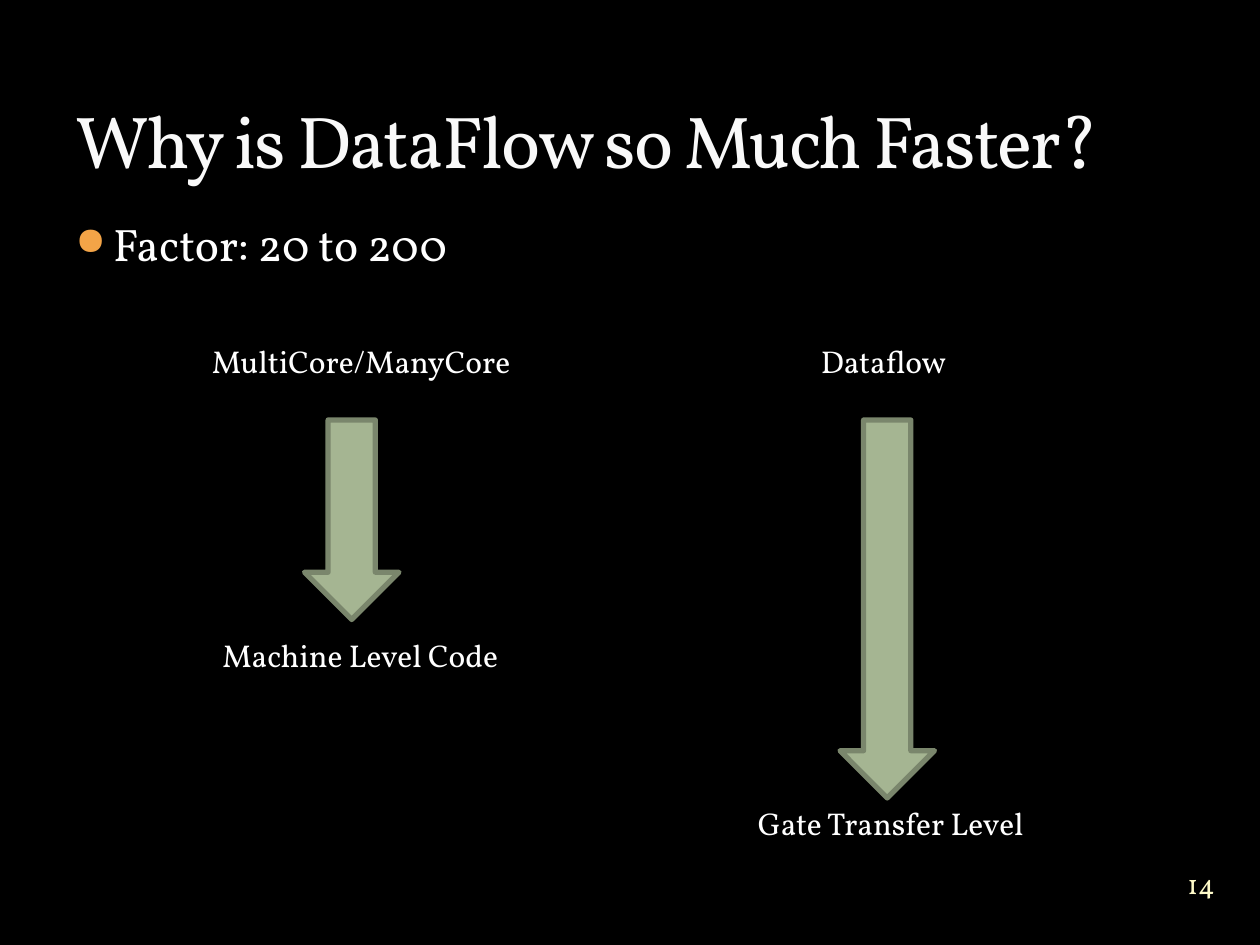
"""Build the slide comparing how far MultiCore/ManyCore and Dataflow compile down."""
import dataclasses
from typing import Any

import lxml.etree
import pptx
import pptx.dml.color
import pptx.enum.shapes
import pptx.enum.text
import pptx.oxml
import pptx.oxml.ns
import pptx.util

RGBColor = pptx.dml.color.RGBColor
BLACK = RGBColor(0x00, 0x00, 0x00)
WHITE = RGBColor(0xFF, 0xFF, 0xFF)
TITLE_WHITE = RGBColor(0xF9, 0xF9, 0xF9)
TITLE_OUTLINE = RGBColor(0x3C, 0x44, 0x22)
CREAM = RGBColor(0xFE, 0xFA, 0xC9)
ORANGE = RGBColor(0xF3, 0xA4, 0x47)
SAGE = RGBColor(0xA5, 0xB5, 0x92)
DARK_SAGE = RGBColor(0x7A, 0x86, 0x6C)

FONT = "Vollkorn"
CELL = pptx.util.Inches(1) / 12
COLUMNS, ROWS = 120, 90
DRAWING = pptx.oxml.ns.nsdecls("a")
ANCHOR = pptx.enum.text.MSO_ANCHOR
ALIGN = pptx.enum.text.PP_ALIGN


@dataclasses.dataclass(frozen=True)
class Area:
    """A rectangle in grid columns and rows."""

    column: float
    row: float
    columns: float
    rows: float

    def lengths(self) -> list[int]:
        """Return left, top, width and height as slide lengths."""
        return [round(value * CELL) for value in dataclasses.astuple(self)]


@dataclasses.dataclass(frozen=True)
class Caption:
    """A line of text with its area and format."""

    text: str
    area: Area
    size: float = 18
    color: RGBColor = WHITE
    frame_format: dict[str, Any] = dataclasses.field(default_factory=dict)
    paragraph_format: dict[str, Any] = dataclasses.field(default_factory=dict)


TITLE = Caption("Why is DataFlow so Much Faster?", Area(6, 2, 108, 16), 42, TITLE_WHITE,
                {"vertical_anchor": ANCHOR.BOTTOM})
FACTOR = Caption("Factor: 20 to 200", Area(6, 20, 108, 8), 26,
                 paragraph_format={"space_before": pptx.util.Pt(6)})
LABELS = [
    Caption("MultiCore/ManyCore", Area(19, 32, 32, 4.8)),
    Caption("Dataflow", Area(77, 32, 18, 4.8)),
    Caption("Machine Level Code", Area(20, 60, 29, 4.8)),
    Caption("Gate Transfer Level", Area(71, 76, 30, 4.8)),
]
PAGE_NUMBER = Caption(
    "14", Area(110.4, 81.1, 8, 6), 16, CREAM,
    {"vertical_anchor": ANCHOR.MIDDLE, "margin_left": 0, "margin_top": 0,
     "margin_right": 0, "margin_bottom": 0},
    {"alignment": ALIGN.CENTER})
ARROWS = [Area(29, 40, 9, 19), Area(80, 40, 9, 36)]


def apply_format(target: Any, values: dict[str, Any]) -> None:
    """Set each named attribute on the target."""
    for name, value in values.items():
        setattr(target, name, value)


def add_caption(slide: Any, caption: Caption) -> Any:
    """Add a text box and return its paragraph."""
    frame = slide.shapes.add_textbox(*caption.area.lengths()).text_frame
    apply_format(frame, {"word_wrap": True, **caption.frame_format})
    paragraph = frame.paragraphs[0]
    apply_format(paragraph, caption.paragraph_format)
    run = paragraph.add_run()
    run.text = caption.text
    apply_format(run.font, {"name": FONT, "size": pptx.util.Pt(caption.size)})
    run.font.color.rgb = caption.color
    return paragraph


def add_bullet(paragraph: Any) -> None:
    """Give the paragraph a hanging round bullet."""
    properties = paragraph._p.get_or_add_pPr()
    indent = pptx.util.Inches(0.3)
    properties.set("marL", str(indent))
    properties.set("indent", str(-indent))
    for markup in (
        f'<a:buClr {DRAWING}><a:srgbClr val="{ORANGE}"/></a:buClr>',
        f'<a:buSzPct {DRAWING} val="85000"/>',
        f'<a:buChar {DRAWING} char="●"/>',
    ):
        properties.append(pptx.oxml.parse_xml(markup))


def style_title(paragraph: Any) -> None:
    """Tighten the title's letters and give them a faint outline."""
    properties = paragraph.runs[0].font._element
    properties.set("spc", "-100")
    properties.insert(0, pptx.oxml.parse_xml(
        f'<a:ln {DRAWING} w="{pptx.util.Pt(0.25)}"><a:solidFill>'
        f'<a:srgbClr val="{TITLE_OUTLINE}"><a:alpha val="25000"/></a:srgbClr>'
        f'</a:solidFill></a:ln>'))


def add_arrow(slide: Any, area: Area) -> None:
    """Add a downward block arrow."""
    arrow = slide.shapes.add_shape(
        pptx.enum.shapes.MSO_SHAPE.DOWN_ARROW, *area.lengths())
    arrow.shadow.inherit = False
    arrow.fill.solid()
    arrow.fill.fore_color.rgb = SAGE
    arrow.line.color.rgb = DARK_SAGE
    arrow.line.width = pptx.util.Pt(3)


def main() -> None:
    """Create and save the presentation."""
    presentation = pptx.Presentation()
    apply_format(presentation, {"slide_width": round(COLUMNS * CELL),
                                "slide_height": round(ROWS * CELL)})
    slide = presentation.slides.add_slide(presentation.slide_layouts[6])
    slide.background.fill.solid()
    slide.background.fill.fore_color.rgb = BLACK
    add_bullet(add_caption(slide, FACTOR))
    style_title(add_caption(slide, TITLE))
    for label in LABELS:
        add_caption(slide, label)
    for area in ARROWS:
        add_arrow(slide, area)
    add_caption(slide, PAGE_NUMBER)
    presentation.save("out.pptx")


if __name__ == "__main__":
    main()
